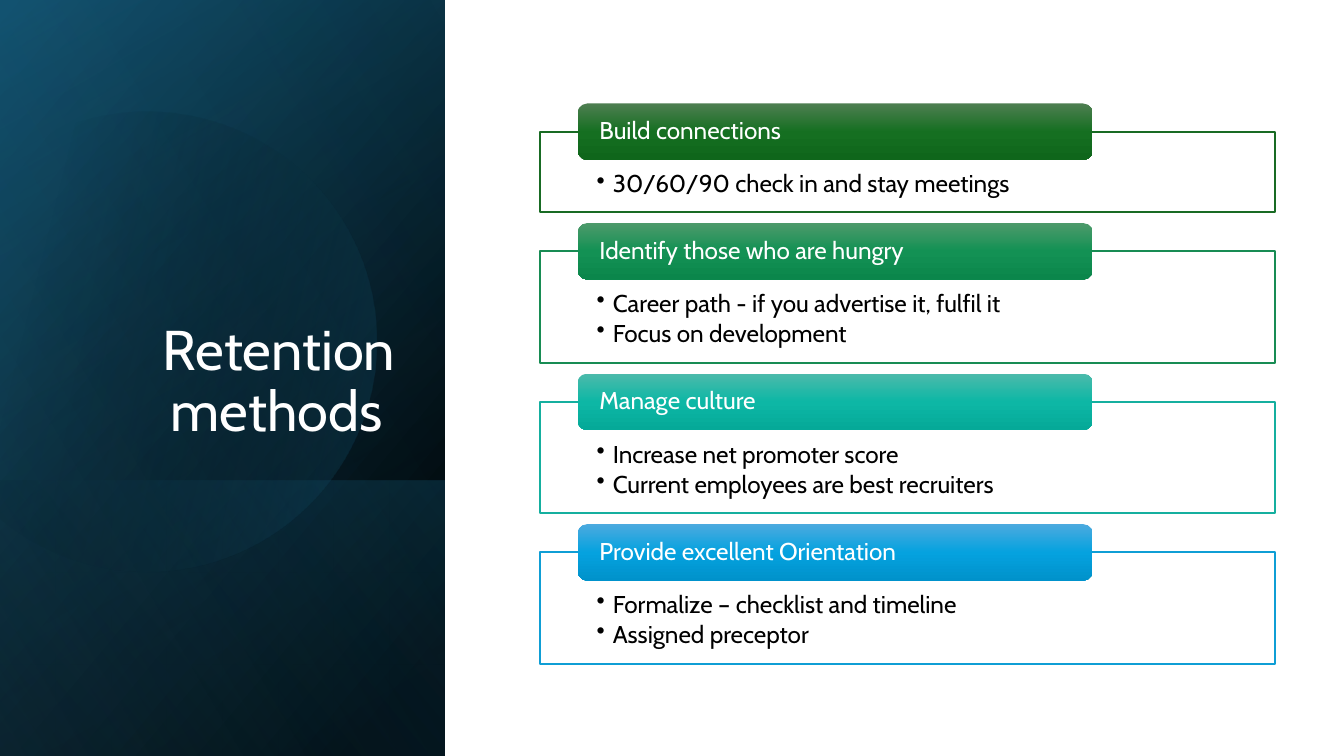
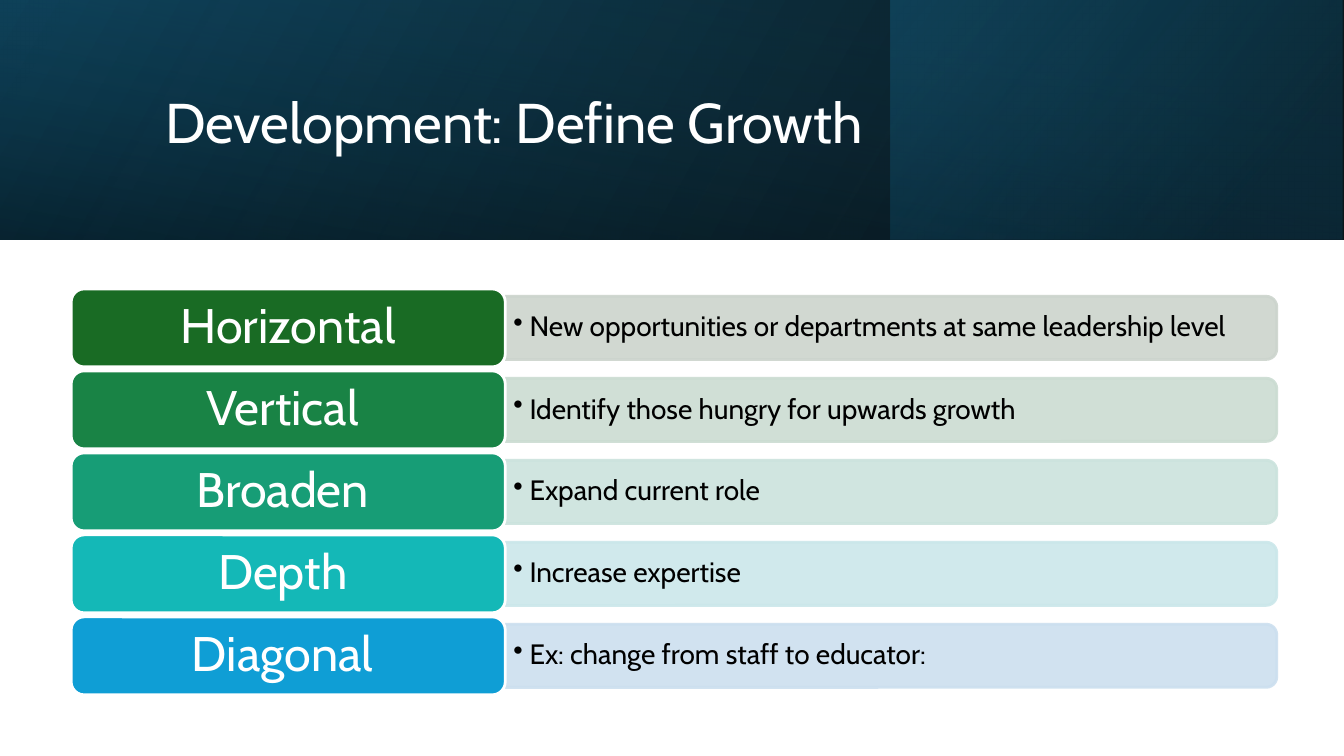
from math import cos, radians, sin

from pptx import Presentation
from pptx.dml.color import RGBColor
from pptx.enum.shapes import MSO_SHAPE as SHAPE
from pptx.enum.text import MSO_ANCHOR as ANCHOR, PP_ALIGN as ALIGN
from pptx.oxml.ns import qn
from pptx.oxml.xmlchemy import OxmlElement
from pptx.util import Inches, Pt

# Grid: 100 square units across the slide, 16:9
WIDTH = Inches(10)
COLS = 100
ROWS = COLS * 9 / 16
UNIT = WIDTH / COLS

FONT = "Cabin"
C = {
    "black": "000000", "white": "FFFFFF",
    "navy": "104862", "deep": "0B3041", "teal": "156082", "sky": "46B1E1",
    "forest": "196B24", "forest_top": "4D7E50", "forest_mid": "156F21", "forest_low": "0F661B",
    "green": "188C54", "green_top": "4D9A6B", "green_mid": "139154", "green_low": "0B864B",
    "mint": "15AF9F", "mint_top": "4CBAAB", "mint_mid": "0DB7A5", "mint_low": "05A998",
    "blue": "0F9ED5", "blue_top": "4CAADF", "blue_mid": "05A2DF", "blue_low": "0092CB",
    "leaf": "198345", "jade": "179D76", "aqua": "14B8B7",
    "forest_pale": "CCD4CD", "leaf_pale": "CBDCD2", "jade_pale": "CBE3DD",
    "aqua_pale": "CBE7EA", "blue_pale": "CCDFEF",
}

# Slide 1: heading, bullets, colour
METHODS = [
    ("Build connections", ["30/60/90 check in and stay meetings"], "forest"),
    ("Identify those who are hungry",
     ["Career path - if you advertise it, fulfil it", "Focus on development"], "green"),
    ("Manage culture",
     ["Increase net promoter score", "Current employees are best recruiters"], "mint"),
    ("Provide excellent Orientation",
     ["Formalize – checklist and timeline", "Assigned preceptor"], "blue"),
]

# Slide 2: direction, meaning, colour
GROWTH = [
    ("Horizontal", "New opportunities or departments at same leadership level", "forest"),
    ("Vertical ", "Identify those hungry for upwards growth", "leaf"),
    ("Broaden ", "Expand current role", "jade"),
    ("Depth ", "Increase expertise", "aqua"),
    ("Diagonal ", "Ex: change from staff to educator:", "blue"),
]


def grid(*units):
    return [round(u * UNIT) for u in units]


def rgb(name):
    return RGBColor.from_string(C[name])


# Fills and lines
def add_alpha(clr, percent):
    alpha = OxmlElement("a:alpha")
    alpha.set("val", str(percent * 1000))
    clr.append(alpha)


def fill_solid(sp, name, alpha=100):
    sp.fill.solid()
    sp.fill.fore_color.rgb = rgb(name)
    if alpha < 100:
        add_alpha(sp._element.spPr.find(qn("a:solidFill"))[0], alpha)


def fill_gradient(sp, stops, angle):
    """Each stop is (position, colour[, opacity]); the angle runs clockwise."""
    sp.fill.gradient()
    sp.fill.gradient_angle = (360 - angle) % 360
    gs_list = sp._element.spPr.find(qn("a:gradFill")).find(qn("a:gsLst"))
    for gs in list(gs_list):
        gs_list.remove(gs)
    for pos, name, *alpha in stops:
        gs = OxmlElement("a:gs")
        gs.set("pos", str(pos * 1000))
        clr = OxmlElement("a:srgbClr")
        clr.set("val", C[name])
        if alpha:
            add_alpha(clr, alpha[0])
        gs.append(clr)
        gs_list.append(gs)


def set_line(sp, name=None, width=1, alpha=100):
    if name is None:
        sp.line.fill.background()
        return
    sp.line.color.rgb = rgb(name)
    sp.line.width = Pt(width)
    if alpha < 100:
        add_alpha(sp.line._ln.find(qn("a:solidFill"))[0], alpha)


# Shapes
def add_shape(s, kind, x, y, w, h, turn=0):
    """Place a shape so that it covers the given box after a quarter turn."""
    if turn:
        x, y, w, h = x + (w - h) / 2, y + (h - w) / 2, h, w
    sp = s.shapes.add_shape(kind, *grid(x, y, w, h))
    sp.rotation = turn
    sp.shadow.inherit = False
    set_line(sp)
    return sp


def add_panel(s, box, stops, angle, turn=0):
    sp = add_shape(s, SHAPE.RECTANGLE, *box, turn=turn)
    sp._element.spPr.xfrm.set("flipH", "1")
    fill_gradient(sp, stops, angle)


def add_cut_disc(s, cx, cy, radius, start, end, turn, stops, angle):
    pts = [((cx + radius * cos(radians(a))) * UNIT, (cy + radius * sin(radians(a))) * UNIT)
           for a in range(start, end + 1, 3)]
    fb = s.shapes.build_freeform(*pts[0], scale=1.0)
    fb.add_line_segments(pts[1:], close=True)
    sp = fb.convert_to_shape()
    sp.rotation = turn
    sp.shadow.inherit = False
    set_line(sp)
    fill_gradient(sp, stops, angle)


# Text
def write(sp, lines, size, color="white", align=ALIGN.LEFT, anchor=ANCHOR.MIDDLE,
          insets=(0.1, 0.05, 0.1, 0.05), after=0, bullet=False):
    tf = sp.text_frame
    tf.word_wrap = True
    tf.vertical_anchor = anchor
    tf.margin_left, tf.margin_top, tf.margin_right, tf.margin_bottom = map(Inches, insets)
    for i, line in enumerate(lines):
        p = tf.add_paragraph() if i else tf.paragraphs[0]
        p.alignment = align
        p.line_spacing = 0.9
        p.space_after = Pt(size * after)
        if bullet:
            add_bullet(p)
        r = p.add_run()
        r.text = line
        r.font.name = FONT
        r.font.size = Pt(size)
        r.font.color.rgb = rgb(color)


def add_bullet(p):
    p.level = 1
    pPr = p._p.get_or_add_pPr()
    pPr.set("marL", str(Inches(0.12)))
    pPr.set("indent", str(-Inches(0.12)))
    bu = OxmlElement("a:buChar")
    bu.set("char", "•")
    pPr.append(bu)


def add_title(s, text, box, **style):
    write(s.shapes.add_textbox(*grid(*box)), [text], 30, **style)


# Slide 1 parts
def add_side_panel(s):
    w, low = 33.1, 20.5
    full = (0, 0, w, ROWS)
    add_panel(s, full, [(8, "black"), (100, "navy")], 50, 90)
    add_panel(s, full, [(0, "black", 0), (99, "teal", 46)], 30, 90)
    add_panel(s, (0, ROWS - low, w, low), [(2, "teal", 29), (100, "black", 30)], 130, 90)
    add_cut_disc(s, 10.9, 25.1, 17.1, 242, 511, 343.9,
                 [(29, "black", 0), (100, "teal", 43)], 30)
    add_panel(s, full, [(0, "black", 0), (99, "sky", 11)], 120, 90)


def add_method(s, y, h, heading, bullets, color):
    frame = add_shape(s, SHAPE.RECTANGLE, 40.2, y, 54.7, h)
    fill_solid(frame, "white", 90)
    set_line(frame, color)
    write(frame, bullets, 13, "black", anchor=ANCHOR.TOP,
          insets=(0.42, 0.3, 0.42, 0.1), after=0.15, bullet=True)
    tab = add_shape(s, SHAPE.ROUNDED_RECTANGLE, 43, y - 2.1, 38.3, 4.2)
    fill_gradient(tab, [(0, color + "_top"), (50, color + "_mid"), (100, color + "_low")], 90)
    write(tab, [heading], 13, insets=(0.14, 0, 0.14, 0), after=0.35)


def build_retention(s):
    add_side_panel(s)
    add_title(s, "Retention methods ", (4.8, 13.8, 25.6, 19.7),
              align=ALIGN.RIGHT, anchor=ANCHOR.BOTTOM)
    y = 9.8
    for heading, bullets, color in METHODS:
        h = 3.7 + 2.3 * len(bullets)
        add_method(s, y, h, heading, bullets, color)
        y += h + 2.9


# Slide 2 parts
def add_top_band(s):
    h, side = 17.8, 33.6
    full = (0, 0, COLS, h)
    add_panel(s, full, [(0, "black", 96), (100, "navy")], 330)
    add_panel(s, (COLS - side - 0.1, 0, side, h), [(19, "deep", 68), (100, "teal", 48)], 320)
    add_panel(s, full, [(23, "navy", 16), (99, "black", 45)], 350, 270)


def add_growth_row(s, y, label, meaning, color):
    x, tile_w, tile_h, bar_w, bar_h = 5.3, 32.3, 5.8, 57.4, 4.7
    pale = color + "_pale"
    bar_x = x + tile_w
    bar = add_shape(s, SHAPE.ROUND_2_SAME_RECTANGLE,
                    bar_x, y + (tile_h - bar_h) / 2, bar_w, bar_h, turn=90)
    fill_solid(bar, pale, 90)
    set_line(bar, pale, 1.5, 90)
    note = s.shapes.add_textbox(*grid(bar_x, y + 0.8, 57.1, 4.2))
    write(note, [meaning], 15, "black", insets=(0.06, 0.03, 0.06, 0.03),
          after=0.15, bullet=True)
    tile = add_shape(s, SHAPE.ROUNDED_RECTANGLE, x, y, tile_w, tile_h)
    fill_solid(tile, color)
    set_line(tile, "white", 1.5)
    write(tile, [label], 26, align=ALIGN.CENTER, insets=(0.11, 0.05, 0.11, 0.05), after=0.35)


def build_growth(s):
    add_top_band(s)
    add_title(s, "Development: Define Growth", (11.3, 2.9, 79.7, 12.9))
    for i, row in enumerate(GROWTH):
        add_growth_row(s, 21.5 + 6.1 * i, *row)


def main():
    prs = Presentation()
    prs.slide_width = WIDTH
    prs.slide_height = round(ROWS * UNIT)
    blank = prs.slide_layouts[6]
    for build in (build_retention, build_growth):
        build(prs.slides.add_slide(blank))
    prs.save("out.pptx")


if __name__ == "__main__":
    main()
